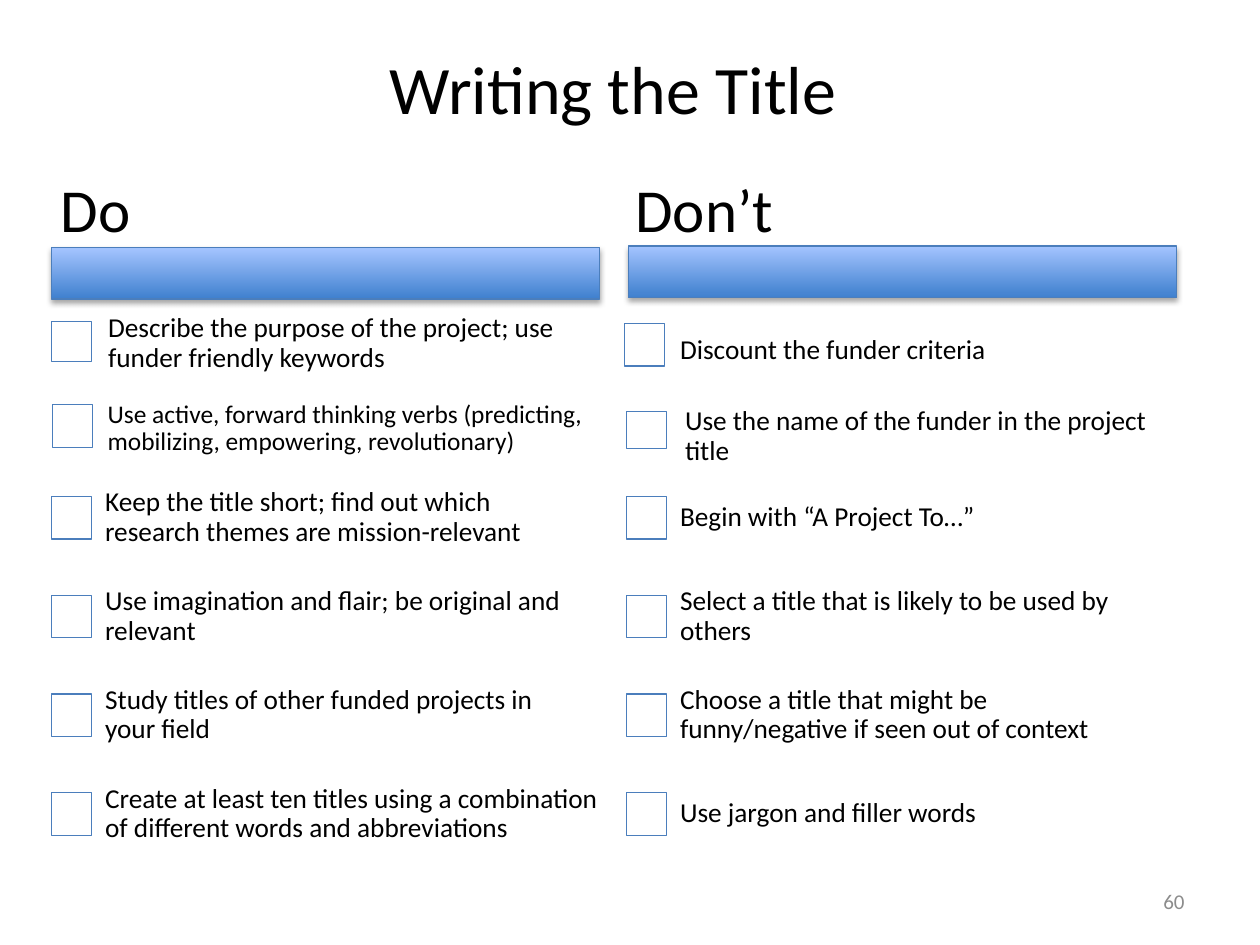
"""Build the "Writing the Title" slide: a do and don't checklist in two columns."""
import pptx
import pptx.dml.color
import pptx.enum.shapes
import pptx.enum.text
import pptx.oxml
import pptx.util

Cm, Pt = pptx.util.Cm, pptx.util.Pt
RGBColor = pptx.dml.color.RGBColor
PP_ALIGN = pptx.enum.text.PP_ALIGN
MIDDLE = pptx.enum.text.MSO_ANCHOR.MIDDLE
RECTANGLE = pptx.enum.shapes.MSO_SHAPE.RECTANGLE

BLACK = RGBColor(0x00, 0x00, 0x00)
WHITE = RGBColor(0xFF, 0xFF, 0xFF)
GRAY = RGBColor(0x8C, 0x8C, 0x8C)
OUTLINE = RGBColor(0x4B, 0x7E, 0xBC)
BAR_DARK = RGBColor(0x3F, 0x80, 0xCE)
BAR_LIGHT = RGBColor(0xA4, 0xC4, 0xFF)
FONT = "Calibri"

TITLE = "Writing the Title"
PAGE = "60"
COLUMNS = [
    {
        "heading": "Do",
        "left": 1.04,
        "bar": (1.04, 4.99),
        "top_rows": [
            ("Describe the purpose of the project; use funder friendly keywords", 15.6,
             (1.04, 6.48, 0.81, 0.81), (1.88, 6.18, 10.13, 1.5)),
            ("Use active, forward thinking verbs (predicting, mobilizing, empowering, revolutionary)",
             14.5, (1.06, 8.16, 0.81, 0.86), (1.87, 7.84, 10.24, 1.6)),
        ],
        "rows": [
            ("Keep the title short; find out which research themes are mission-relevant", 10.2),
            ("Use imagination and flair; be original and relevant", 10.2),
            ("Study titles of other funded projects in your field", 10.2),
            ("Create at least ten titles using a combination of different words and abbreviations", 10.8),
        ],
    },
    {
        "heading": "Don’t",
        "left": 12.63,
        "bar": (12.67, 4.96),
        "top_rows": [
            ("Discount the funder criteria", 15.6,
             (12.59, 6.52, 0.81, 0.86), (13.41, 6.08, 10.2, 1.98)),
            ("Use the name of the funder in the project title", 15.6,
             (12.63, 8.29, 0.81, 0.76), (13.51, 8.05, 10.19, 1.5)),
        ],
        "rows": [
            ("Begin with “A Project To…”", 10.2),
            ("Select a title that is likely to be used by others", 10.2),
            ("Choose a title that might be funny/negative if seen out of context", 10.2),
            ("Use jargon and filler words", 10.2),
        ],
    },
]

COLUMN_WIDTH = 11.05
ROW_TOP, ROW_PITCH, ROW_HEIGHT = 9.45, 1.99, 1.98
TEXT_INDENT, BOX_DROP = 0.78, 0.56

SHADOW = (
    '<a:effectLst xmlns:a="http://schemas.openxmlformats.org/drawingml/2006/main">'
    '<a:outerShdw blurRad="39370" dist="22860" dir="5400000" rotWithShape="0">'
    '<a:srgbClr val="000000"><a:alpha val="35000"/></a:srgbClr>'
    '</a:outerShdw></a:effectLst>'
)


def write(sp, text, size, color=BLACK, align=PP_ALIGN.LEFT, spacing=0.9, insets=None):
    tf = sp.text_frame
    tf.word_wrap = True
    tf.vertical_anchor = MIDDLE
    if insets:
        tf.margin_left = tf.margin_right = Cm(insets[0])
        tf.margin_top = tf.margin_bottom = Cm(insets[1])
    p = tf.paragraphs[0]
    p.text = text
    p.alignment = align
    p.line_spacing = spacing
    p.font.size = Pt(size)
    p.font.name = FONT
    p.font.color.rgb = color


def add_panel(s, area, text, size, insets):
    left, top, width, height = map(Cm, area)
    right, bottom = left + width, top + height
    builder = s.shapes.build_freeform(left, top)
    builder.add_line_segments([(right, top), (right, bottom), (left, bottom)])
    sp = builder.convert_to_shape()
    sp.shadow.inherit = False
    sp.fill.background()
    sp.line.fill.background()
    write(sp, text, size, insets=insets)


def add_rectangle(s, area):
    sp = s.shapes.add_shape(RECTANGLE, *map(Cm, area))
    sp.line.color.rgb = OUTLINE
    sp.line.width = Pt(0.75)
    return sp


def add_bar(s, area):
    sp = add_rectangle(s, area)
    sp.fill.gradient()
    sp.fill.gradient_angle = 90
    for stop, color in zip(sp.fill.gradient_stops, (BAR_DARK, BAR_LIGHT)):
        stop.color.rgb = color
    sp._element.spPr.append(pptx.oxml.parse_xml(SHADOW))


def add_item(s, text, size, box, area):
    sp = add_rectangle(s, box)
    sp.shadow.inherit = False
    sp.fill.solid()
    sp.fill.fore_color.rgb = WHITE
    add_panel(s, area, text, size, (0.3, 0.3))


def add_column(s, column):
    left = column["left"]
    add_bar(s, (*column["bar"], COLUMN_WIDTH, 1.04))
    add_panel(s, (left, 3.05, COLUMN_WIDTH, 2.46), column["heading"], 34.9, (0.18, 0.13))
    for item in column["top_rows"]:
        add_item(s, *item)
    for i, (text, width) in enumerate(column["rows"]):
        top = ROW_TOP + i * ROW_PITCH
        add_item(s, text, 15.6, (left, top + BOX_DROP, 0.81, 0.86),
                 (left + TEXT_INDENT, top, width, ROW_HEIGHT))


def main():
    prs = pptx.Presentation()
    prs.slide_width, prs.slide_height = Cm(25.4), Cm(19.05)
    s = prs.slides.add_slide(prs.slide_layouts[5])
    title = s.shapes.title
    title.left, title.top, title.width, title.height = map(Cm, (1.14, 0.35, 22.43, 2.84))
    write(title, TITLE, 38.8, align=PP_ALIGN.CENTER, spacing=1.0)
    page = s.shapes.add_textbox(*map(Cm, (18.21, 17.65, 5.92, 1.02)))
    write(page, PAGE, 12, GRAY, PP_ALIGN.RIGHT, 1.0)
    for column in COLUMNS:
        add_column(s, column)
    prs.save("out.pptx")


if __name__ == "__main__":
    main()
